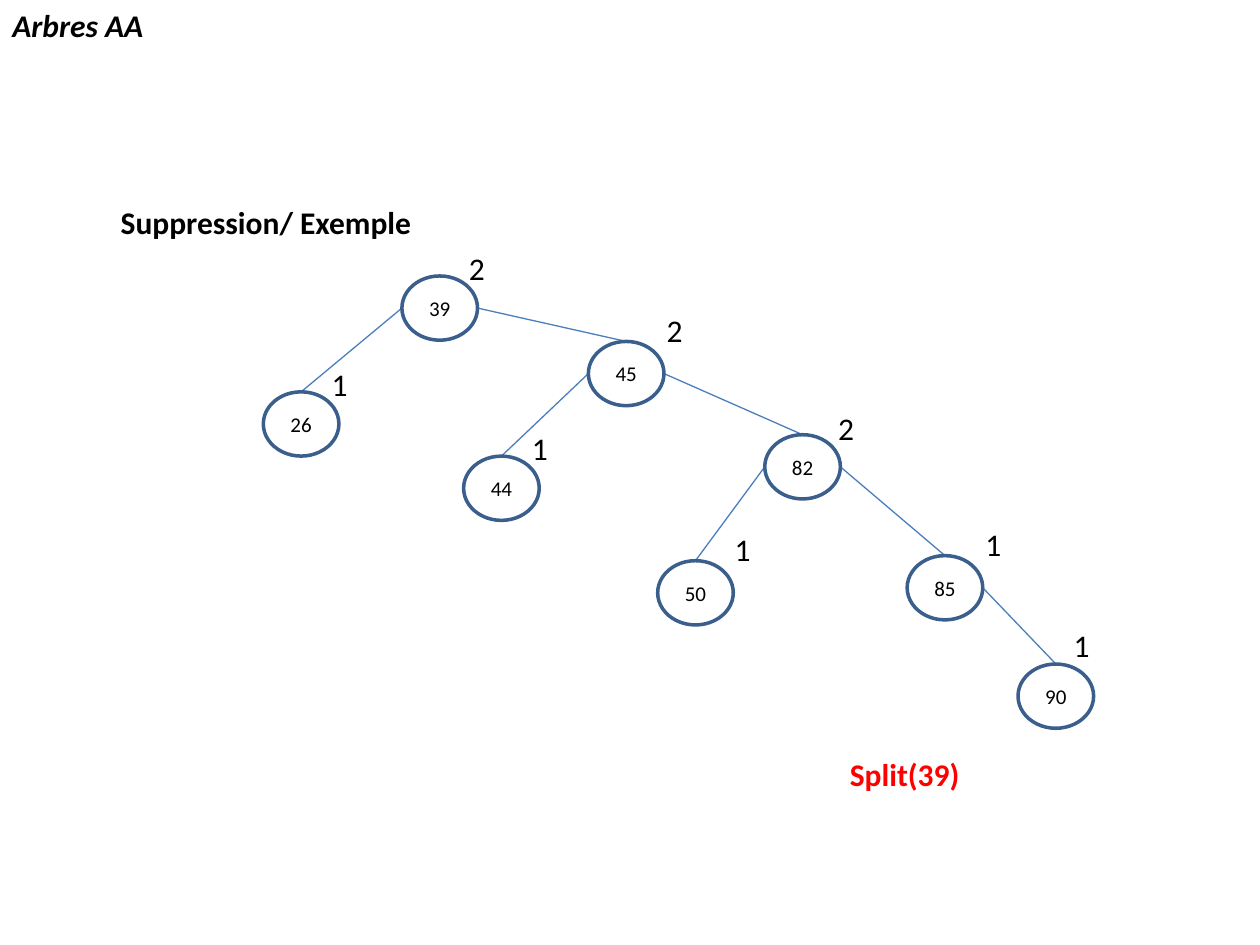
from lxml import etree
from pptx import Presentation
from pptx import util as u
from pptx.dml.color import RGBColor
from pptx.enum import shapes, text
from pptx.oxml import ns

COLORS = {"ink": "000000", "paper": "FFFFFF", "ring": "3A5F8C",
          "edge": "4B7EBC", "accent": "FF0000"}
FONT = "Calibri"
NODE_WIDTH, NODE_HEIGHT = 0.6, 0.51
TEXT_HEIGHT, LEVEL_WIDTH = 0.4, 0.33

# key: (node left, node top, level, level left, level top)
NODES = {
    39: (3.19, 2.19, 2, 3.62, 1.93),
    26: (2.09, 3.11, 1, 2.53, 2.85),
    45: (4.67, 2.71, 2, 5.19, 2.42),
    44: (3.68, 3.62, 1, 4.12, 3.36),
    82: (6.07, 3.45, 2, 6.55, 3.20),
    50: (5.22, 4.45, 1, 5.73, 4.16),
    85: (7.20, 4.41, 1, 7.72, 4.12),
    90: (8.08, 5.27, 1, 8.42, 4.92),
}
# (parent, child)
EDGES = [(39, 26), (39, 45), (45, 44), (45, 82), (82, 50), (82, 85), (85, 90)]


def color(name):
    return RGBColor.from_string(COLORS[name])


def style_paragraph(para, size, ink="ink", bold=False, italic=False):
    font = para.font
    font.name, font.size = FONT, u.Pt(size)
    font.bold, font.italic = bold, italic
    font.color.rgb = color(ink)


def add_text(page, words, left, top, width, align=text.PP_ALIGN.LEFT,
             wrap=True, **style):
    box = page.shapes.add_textbox(*map(u.Inches, (left, top, width, TEXT_HEIGHT)))
    box.text_frame.word_wrap = wrap
    para = box.text_frame.paragraphs[0]
    para.text = words
    para.alignment = align
    style_paragraph(para, 18, **style)


def add_edge(page, parent, child):
    """Join a side of the parent to the top of the child."""
    parent_left, parent_top = NODES[parent][:2]
    child_left, child_top = NODES[child][:2]
    start_x = parent_left + (NODE_WIDTH if child > parent else 0)
    ends = (start_x, parent_top + NODE_HEIGHT / 2,
            child_left + NODE_WIDTH / 2, child_top)
    edge = page.shapes.add_connector(shapes.MSO_CONNECTOR.STRAIGHT,
                                     *map(u.Inches, ends))
    edge.line.color.rgb = color("edge")
    edge.line.width = u.Pt(0.75)
    etree.SubElement(edge._element.spPr, ns.qn("a:effectLst"))


def add_node(page, key):
    left, top, level, level_left, level_top = NODES[key]
    node = page.shapes.add_shape(
        shapes.MSO_SHAPE.OVAL,
        *map(u.Inches, (left, top, NODE_WIDTH, NODE_HEIGHT)))
    node.shadow.inherit = False
    node.fill.solid()
    node.fill.fore_color.rgb = color("paper")
    node.line.color.rgb = color("ring")
    node.line.width = u.Pt(2)
    frame = node.text_frame
    frame.vertical_anchor = text.MSO_ANCHOR.MIDDLE
    para = frame.paragraphs[0]
    para.text = str(key)
    para.alignment = text.PP_ALIGN.CENTER
    style_paragraph(para, 12)
    add_text(page, str(level), level_left, level_top, LEVEL_WIDTH,
             text.PP_ALIGN.CENTER, wrap=False)


def main():
    deck = Presentation()
    deck.slide_width, deck.slide_height = u.Inches(10), u.Inches(7.5)
    page = deck.slides.add_slide(deck.slide_layouts[6])

    # Headings
    add_text(page, "Arbres AA", 0, 0, 2.5, text.PP_ALIGN.JUSTIFY,
             bold=True, italic=True)
    add_text(page, "Suppression/ Exemple", 0.86, 1.56, 6.72, bold=True)

    # Tree
    for parent, child in EDGES:
        add_edge(page, parent, child)
    for key in NODES:
        add_node(page, key)

    # Operation
    add_text(page, "Split(39)", 6.64, 5.94, 1.08, text.PP_ALIGN.CENTER,
             wrap=False, ink="accent", bold=True)

    deck.save("out.pptx")


if __name__ == "__main__":
    main()
